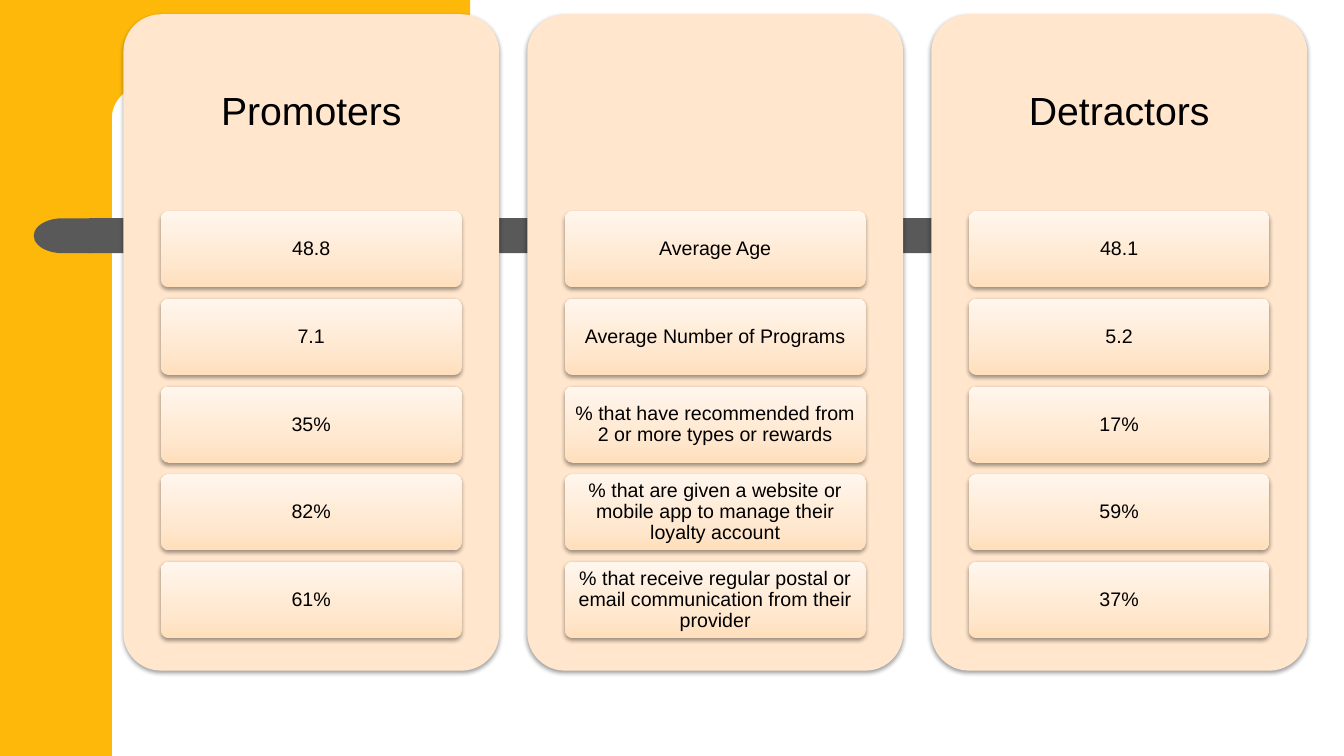
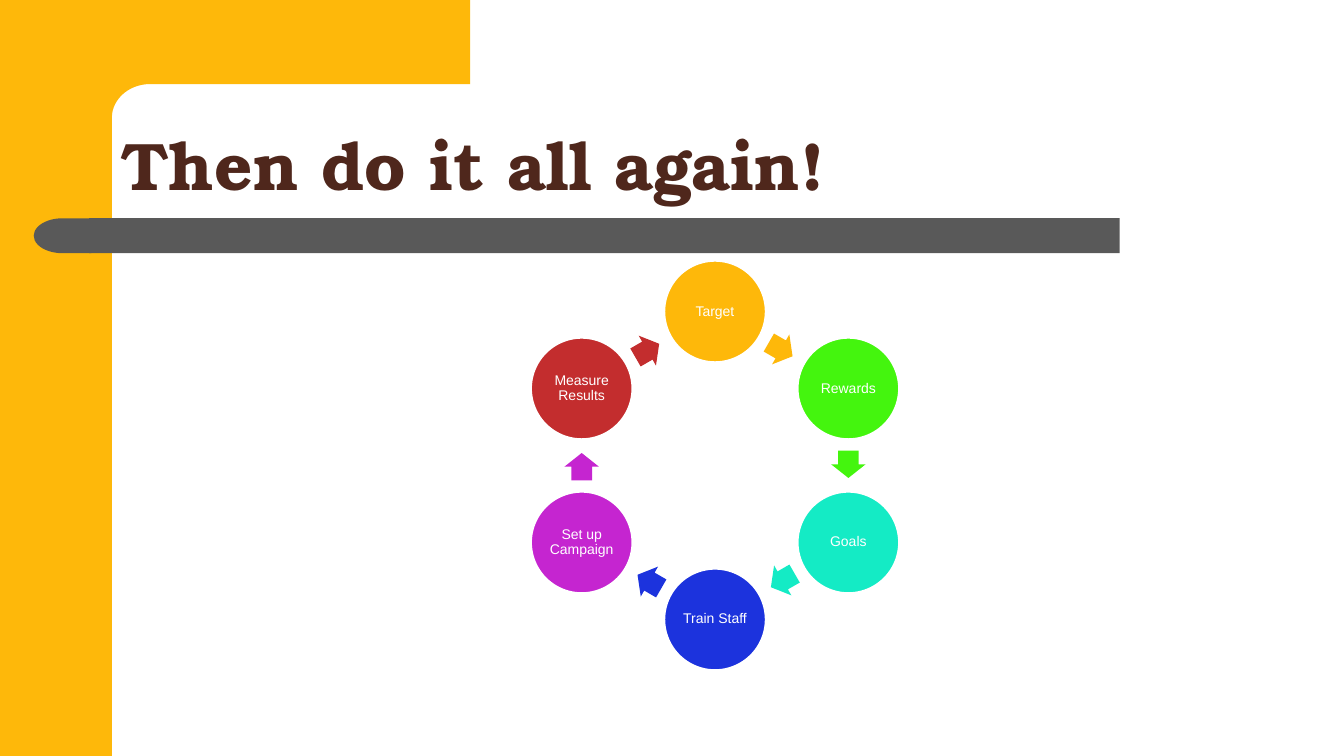
from dataclasses import dataclass
from math import cos, hypot, radians, sin

from lxml.etree import SubElement
from pptx import Presentation
from pptx.dml.color import RGBColor
from pptx.enum.shapes import MSO_SHAPE as SHAPE
from pptx.enum.text import MSO_ANCHOR as ANCHOR, PP_ALIGN as ALIGN
from pptx.oxml.ns import qn
from pptx.util import Cm, Pt


@dataclass(frozen=True)
class Theme:
    amber: str = "FEB80A"
    bar: str = "595959"
    title: str = "4F271C"
    panel: str = "FFE6CC"
    cell: tuple = ((0, "FFDFBC"), (35, "FFE8D0"), (100, "FFF6ED"))
    dark: str = "000000"
    light: str = "FFFFFF"
    body_font: str = "Arial"
    title_font: str = "TeX Gyre Bonum"
    title_size: int = 48
    heading_size: int = 28
    cell_size: int = 14
    step_size: int = 10


@dataclass(frozen=True)
class Box:
    """A region of the slide, in centimetres."""
    left: float
    top: float
    width: float
    height: float

    def emu(self):
        return Cm(self.left), Cm(self.top), Cm(self.width), Cm(self.height)

    @classmethod
    def around(cls, x, y, width, height):
        return cls(x - width / 2, y - height / 2, width, height)


THEME = Theme()
SLIDE_WIDTH, SLIDE_HEIGHT = 33.87, 19.05
TITLE_BOX = Box(2.82, 2.12, 30.12, 3.17)
COMPARISON_BOX = Box(3.11, 0.36, 29.83, 16.54)
CYCLE_BOX = Box(12.85, 6.56, 10.34, 10.34)

METRICS = [
    "Average Age",
    "Average Number of Programs",
    "% that have recommended from 2 or more types or rewards",
    "% that are given a website or mobile app to manage their loyalty account",
    "% that receive regular postal or email communication from their provider",
]
COLUMNS = [
    ("Promoters", ["48.8", "7.1", "35%", "82%", "61%"]),
    (None, METRICS),
    ("Detractors", ["48.1", "5.2", "17%", "59%", "37%"]),
]
STEPS = [
    ("Target", "FEB80A"),
    ("Rewards", "44F50E"),
    ("Goals", "14EBC5"),
    ("Train Staff", "1C33DD"),
    ("Set up Campaign", "C525D0"),
    ("Measure Results", "C32D2E"),
]


def rgb(value):
    return RGBColor.from_string(value)


def paint(shape, fill):
    """Give a shape a flat fill, with no outline and no shadow."""
    shape.shadow.inherit = False
    shape.fill.solid()
    shape.fill.fore_color.rgb = rgb(fill)
    shape.line.fill.background()


def add_figure(slide, kind, box, fill, adjustments=(), rotation=0):
    figure = slide.shapes.add_shape(kind, *box.emu())
    paint(figure, fill)
    for index, value in enumerate(adjustments):
        figure.adjustments[index] = value
    figure.rotation = rotation
    return figure


def add_colour(parent, value):
    return SubElement(parent, qn("a:srgbClr"), val=value)


def cast_shadow(shape):
    effects = shape._element.spPr.find(qn("a:effectLst"))
    shadow = SubElement(effects, qn("a:outerShdw"), blurRad=str(Pt(3.1)),
                        dist=str(Pt(1.6)), dir="5400000", rotWithShape="0")
    SubElement(add_colour(shadow, THEME.dark), qn("a:alpha"), val="38000")


def shade_upwards(shape, stops):
    shape.fill.gradient()
    shape.fill.gradient_angle = 90
    stop_list = shape._element.spPr.find(qn("a:gradFill")).find(qn("a:gsLst"))
    for stop in list(stop_list):
        stop_list.remove(stop)
    for percent, value in stops:
        add_colour(SubElement(stop_list, qn("a:gs"), pos=str(percent * 1000)), value)


def write(shape, text, *, size, color, font=THEME.body_font, bold=False,
          align=ALIGN.CENTER, anchor=ANCHOR.MIDDLE, margins=(0.1, 0.08)):
    frame = shape.text_frame
    frame.word_wrap = True
    frame.vertical_anchor = anchor
    frame.margin_left = frame.margin_right = Cm(margins[0])
    frame.margin_top = frame.margin_bottom = Cm(margins[1])
    paragraph = frame.paragraphs[0]
    paragraph.text = text
    paragraph.alignment = align
    paragraph.line_spacing = 0.9
    paragraph.font.size = Pt(size)
    paragraph.font.name = font
    paragraph.font.bold = bold
    paragraph.font.color.rgb = rgb(color)


def add_top_band(slide, box, side_width, start):
    """Draw the top band, with a rounded inner corner where it meets the side."""
    radius_x, radius_y = 0.96, 0.85
    center_x, center_y = side_width + radius_x, box.height + radius_y
    corner = [(center_x - radius_x * sin(radians(angle)),
               center_y - radius_y * cos(radians(angle)))
              for angle in range(0, 91, 6)]
    points = [(box.width, box.top), (box.width, box.height), *corner,
              (start, center_y)]
    outline = slide.shapes.build_freeform(Cm(start), Cm(box.top))
    outline.add_line_segments([(Cm(x), Cm(y)) for x, y in points])
    paint(outline.convert_to_shape(), THEME.amber)


def add_backdrop(slide):
    side = Box(0, 0, 2.82, SLIDE_HEIGHT)
    add_figure(slide, SHAPE.RECTANGLE, side, THEME.amber)
    add_top_band(slide, Box(0, 0, 11.85, 2.12), side.width, 1.7)
    add_figure(slide, SHAPE.RECTANGLE, Box(2.25, 5.5, 25.97, 0.88), THEME.bar)
    add_figure(slide, SHAPE.FLOWCHART_DELAY, Box(0.85, 5.5, 1.45, 0.88),
               THEME.bar, rotation=180)


def add_title(slide, box, text):
    title = slide.shapes.add_textbox(*box.emu())
    write(title, text, size=THEME.title_size, color=THEME.title,
          font=THEME.title_font, bold=True, align=ALIGN.LEFT,
          anchor=ANCHOR.BOTTOM, margins=(0.25, 0.13))


def add_column(slide, box, heading, values):
    panel = add_figure(slide, SHAPE.ROUNDED_RECTANGLE, box, THEME.panel, [0.1])
    cast_shadow(panel)
    header = Box(box.left, box.top, box.width, box.height * 0.3)
    if heading:
        write(slide.shapes.add_textbox(*header.emu()), heading,
              size=THEME.heading_size, color=THEME.dark, margins=(0.3, 0.3))

    cell_height, pitch = 1.92, 2.21
    for row, value in enumerate(values):
        cell_box = Box(box.left + box.width * 0.1,
                       header.top + header.height + row * pitch,
                       box.width * 0.8, cell_height)
        cell = add_figure(slide, SHAPE.ROUNDED_RECTANGLE, cell_box,
                          THEME.panel, [0.1])
        shade_upwards(cell, THEME.cell)
        cast_shadow(cell)
        write(cell, value, size=THEME.cell_size, color=THEME.dark)


def add_comparison(slide, box, columns):
    gap = 0.71
    width = (box.width - gap * (len(columns) - 1)) / len(columns)
    for index, (heading, values) in enumerate(columns):
        column_box = Box(box.left + index * (width + gap), box.top,
                         width, box.height)
        add_column(slide, column_box, heading, values)


def add_cycle(slide, box, steps):
    """Set the steps clockwise on a ring, with an arrow from each to the next."""
    diameter, arrow_setback = 2.58, 0.03
    radius = (box.height - diameter) / 2
    center_x, center_y = box.left + box.width / 2, box.top + box.height / 2
    turn = 360 / len(steps)

    def ring_point(index):
        angle = radians(index * turn)
        return center_x + radius * sin(angle), center_y - radius * cos(angle)

    for index, (label, color) in enumerate(steps):
        x, y = ring_point(index)
        next_x, next_y = ring_point(index + 1)
        circle = add_figure(slide, SHAPE.OVAL,
                            Box.around(x, y, diameter, diameter), color)
        circle.line.color.rgb = rgb(THEME.light)
        circle.line.width = Pt(2)
        write(circle, label, size=THEME.step_size, color=THEME.light,
              margins=(0.03, 0.03))
        share = 0.5 - arrow_setback / hypot(next_x - x, next_y - y)
        arrow_box = Box.around(x + (next_x - x) * share,
                               y + (next_y - y) * share, 0.69, 0.87)
        add_figure(slide, SHAPE.RIGHT_ARROW, arrow_box, color, [0.6, 0.5],
                   rotation=(index + 0.5) * turn)


def add_slide(deck):
    slide = deck.slides.add_slide(deck.slide_layouts[6])
    add_backdrop(slide)
    return slide


def main():
    deck = Presentation()
    deck.slide_width, deck.slide_height = Cm(SLIDE_WIDTH), Cm(SLIDE_HEIGHT)

    add_comparison(add_slide(deck), COMPARISON_BOX, COLUMNS)

    cycle_slide = add_slide(deck)
    add_title(cycle_slide, TITLE_BOX, "Then do it all again!")
    add_cycle(cycle_slide, CYCLE_BOX, STEPS)

    deck.save("out.pptx")


if __name__ == "__main__":
    main()
